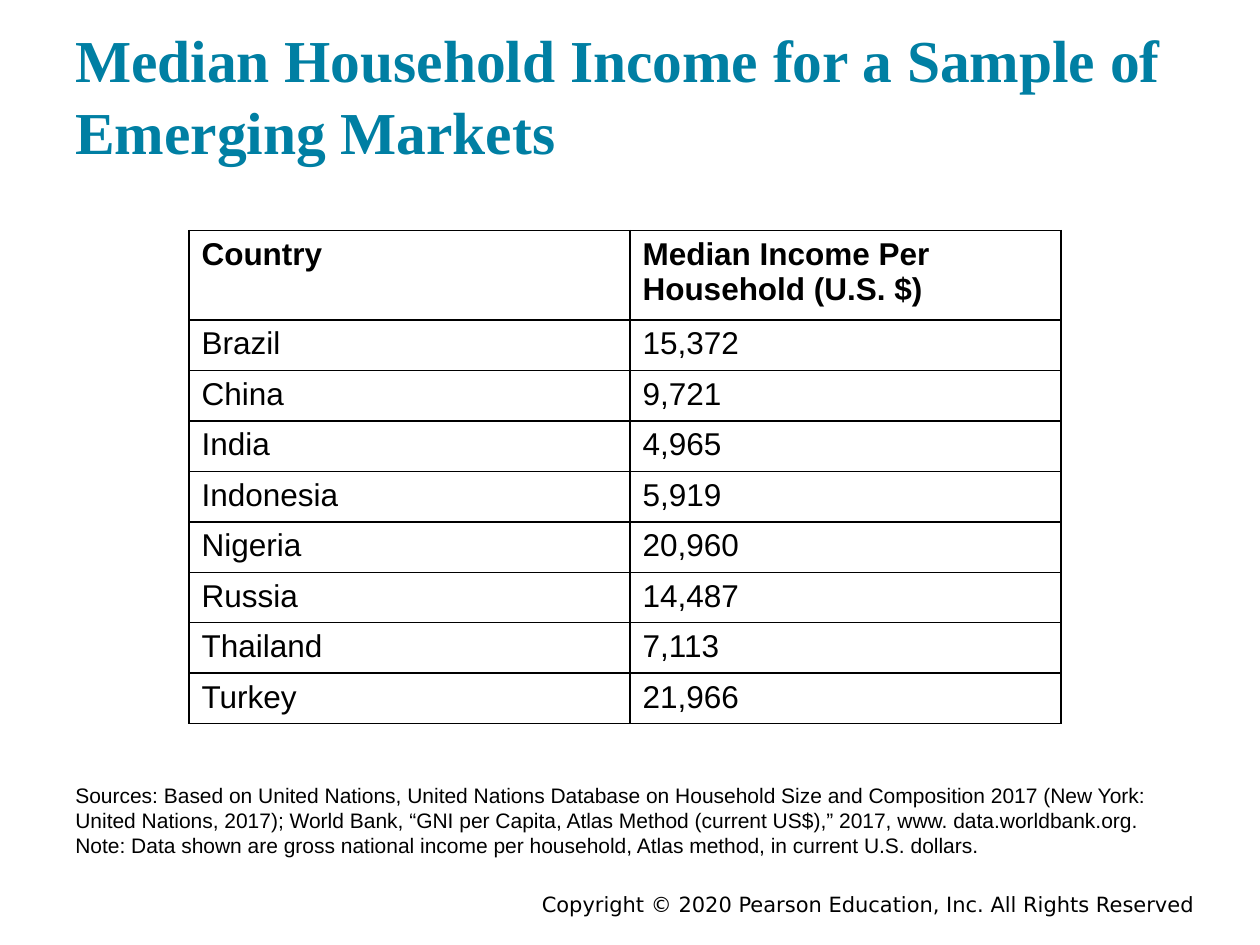
from dataclasses import dataclass

from lxml.etree import SubElement
from pptx import Presentation
from pptx.dml.color import RGBColor
from pptx.enum.text import MSO_ANCHOR, PP_ALIGN
from pptx.oxml.ns import qn
from pptx.util import Inches, Pt


@dataclass(frozen=True)
class Theme:
    ink: str = "000000"
    accent: str = "007FA3"
    title_size: int = 34
    table_size: int = 18
    note_size: int = 12
    serif: str = "Times New Roman"
    sans: str = "Arial"
    footer_face: str = "DejaVu Sans"


class SlideBuilder:
    """Holds the theme and the current slide, and adds elements to it."""

    def __init__(self, slide, theme):
        self.slide = slide
        self.theme = theme

    def wording(self, paragraph, content, size, face, color, bold=False):
        run = paragraph.add_run()
        run.text = content
        run.font.color.rgb = RGBColor.from_string(color)
        for name, value in {"size": Pt(size), "name": face, "bold": bold}.items():
            setattr(run.font, name, value)

    def text(self, content, bounds, size, face, color, bold=False, inset=0.1,
             anchor=MSO_ANCHOR.BOTTOM, align=PP_ALIGN.LEFT):
        frame = self.slide.shapes.add_textbox(*map(Inches, bounds)).text_frame
        layout = {
            "word_wrap": True,
            "vertical_anchor": anchor,
            "margin_left": Inches(0.1),
            "margin_right": Inches(0.1),
            "margin_top": Inches(inset),
            "margin_bottom": Inches(inset),
        }
        for name, value in layout.items():
            setattr(frame, name, value)
        paragraph = frame.paragraphs[0]
        paragraph.alignment = align
        self.wording(paragraph, content, size, face, color, bold)

    def border(self, cell):
        properties = cell._tc.get_or_add_tcPr()
        for side in ("a:lnL", "a:lnR", "a:lnT", "a:lnB"):
            line = SubElement(properties, qn(side), w=str(Pt(1)))
            fill = SubElement(line, qn("a:solidFill"))
            SubElement(fill, qn("a:srgbClr"), val=self.theme.ink)

    def table(self, records, left, top, widths, heights):
        bounds = (left, top, sum(widths), sum(heights))
        grid = self.slide.shapes.add_table(
            len(records), len(widths), *map(Inches, bounds)).table
        grid.horz_banding = False
        for column, width in zip(grid.columns, widths):
            column.width = Inches(width)
        for index, (row, height, record) in enumerate(zip(grid.rows, heights, records)):
            row.height = Inches(height)
            for cell, content in zip(row.cells, record):
                self.border(cell)
                cell.fill.background()
                self.wording(cell.text_frame.paragraphs[0], content,
                             self.theme.table_size, self.theme.sans,
                             self.theme.ink, bold=index == 0)


def main():
    deck = Presentation()
    deck.slide_width, deck.slide_height = Inches(10), Inches(7.5)
    theme = Theme()
    builder = SlideBuilder(deck.slides.add_slide(deck.slide_layouts[6]), theme)

    builder.text("Copyright © 2020 Pearson Education, Inc. All Rights Reserved",
                 (1.75, 7.03, 7.83, 0.22), theme.note_size, theme.footer_face,
                 theme.ink, inset=0.05, anchor=MSO_ANCHOR.TOP, align=PP_ALIGN.RIGHT)
    builder.text("Median Household Income for a Sample of Emerging Markets",
                 (0.5, 0.25, 9, 1.17), theme.title_size, theme.serif,
                 theme.accent, bold=True)

    incomes = [
        ("Country", "Median Income Per Household (U.S. $)"),
        ("Brazil", "15,372"),
        ("China", "9,721"),
        ("India", "4,965"),
        ("Indonesia", "5,919"),
        ("Nigeria", "20,960"),
        ("Russia", "14,487"),
        ("Thailand", "7,113"),
        ("Turkey", "21,966"),
    ]
    country_heights = [0.38] * (len(incomes) - 1)
    builder.table(incomes, 1.5, 1.83, [3.5, 3.42], [0.71, *country_heights])

    builder.text("Sources: Based on United Nations, United Nations Database on "
                 "Household Size and Composition 2017 (New York: United Nations, "
                 "2017); World Bank, “GNI per Capita, Atlas Method (current US$),” "
                 "2017, www. data.worldbank.org. Note: Data shown are gross "
                 "national income per household, Atlas method, in current U.S. "
                 "dollars.",
                 (0.5, 5.91, 9, 1), theme.note_size, theme.sans, theme.ink)

    deck.save("out.pptx")


if __name__ == "__main__":
    main()
